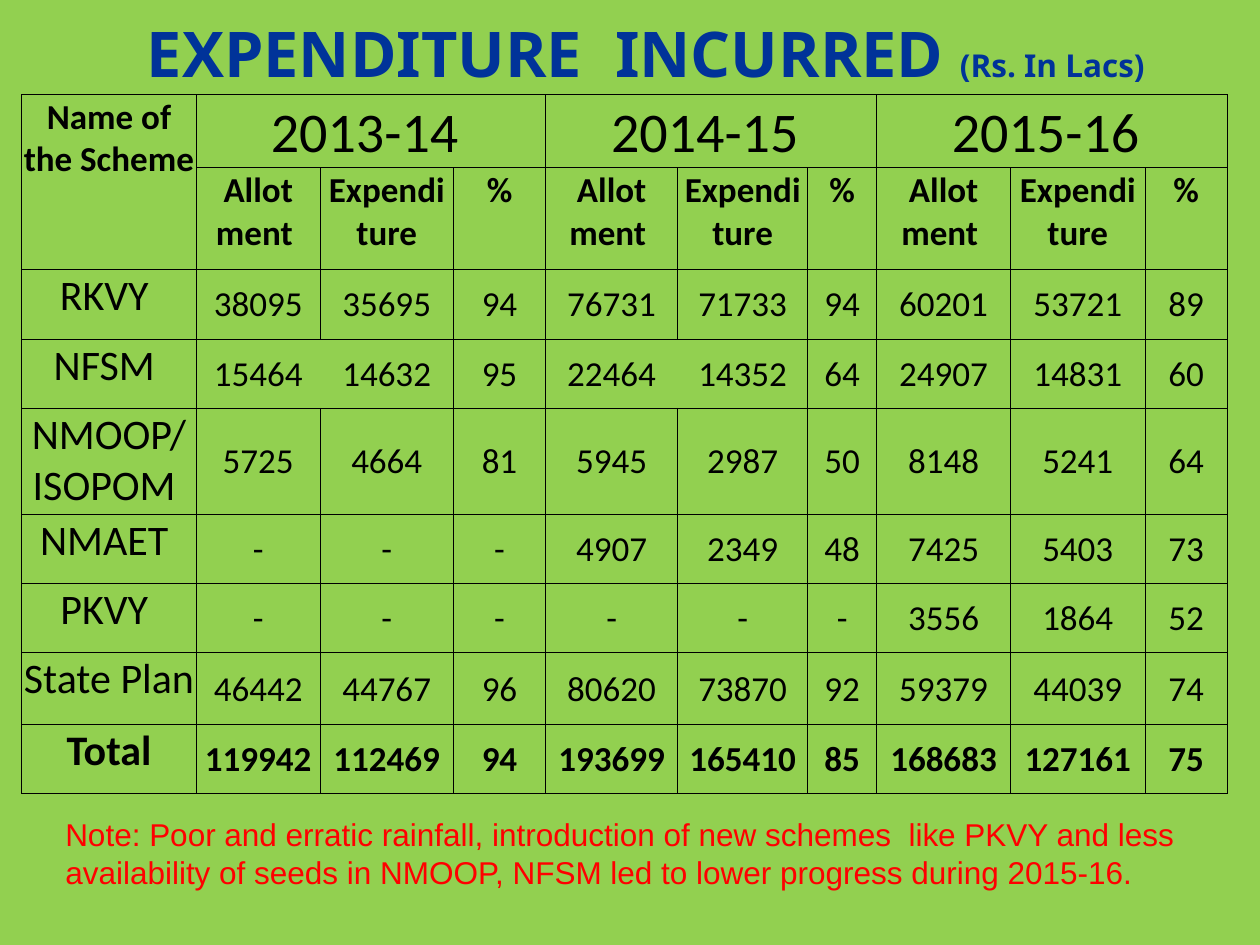
from lxml import etree
from pptx import Presentation
from pptx.dml.color import RGBColor
from pptx.enum import text
from pptx.oxml import ns
from pptx.util import Inches, Pt

GREEN = RGBColor(0x92, 0xD0, 0x50)
NAVY = RGBColor(0x00, 0x33, 0x99)
BLACK = RGBColor(0x00, 0x00, 0x00)
RED = RGBColor(0xFF, 0x00, 0x00)

COLUMNS = [1.39, 0.98, 1.06, 0.73, 1.05, 1.03, 0.55, 1.06, 1.07, 0.65]
ROWS = [0.58, 0.81, 0.55, 0.55, 0.84, 0.55, 0.55, 0.57, 0.55]
YEARS = ["2013-14 ", "2014-15 ", "2015-16 "]
MEASURES = ["Allot\nment ", "Expendi\nture", "%"]
SCHEMES = [
    ("RKVY ", "38095 35695 94 76731 71733 94 60201 53721 89"),
    ("NFSM ", "15464 14632 95 22464 14352 64 24907 14831 60"),
    ("NMOOP/ ISOPOM ", "5725 4664 81 5945 2987 50 8148 5241 64"),
    ("NMAET ", " - - - 4907 2349 48 7425 5403 73"),
    ("PKVY ", "- - - - - - 3556 1864 52"),
    ("State Plan ", "46442 44767 96 80620 73870 92 59379 44039 74"),
    ("Total", "119942 112469 94 193699 165410 85 168683 127161 75"),
]
OPEN_SIDES = {(3, 1): "R", (3, 2): "L", (3, 4): "R", (3, 5): "L"}


def add_run(p, words, size, font, color, bold=False):
    """Add one formatted run to a paragraph."""
    r = p.add_run()
    r.text = words
    r.font.size = Pt(size)
    r.font.name = font
    r.font.color.rgb = color
    r.font.bold = bold


def add_text_box(slide, left, top, width, height, anchor):
    """Add a wrapping text box and return its text frame."""
    tf = slide.shapes.add_textbox(Inches(left), Inches(top), Inches(width), Inches(height)).text_frame
    tf.word_wrap = True
    tf.vertical_anchor = anchor
    return tf


def add_title(slide, left, top, width, height):
    """Place the centred heading with its unit."""
    tf = add_text_box(slide, left, top, width, height, text.MSO_ANCHOR.MIDDLE)
    p = tf.paragraphs[0]
    p.alignment = text.PP_ALIGN.CENTER
    add_run(p, "EXPENDITURE  INCURRED ", 36, "Noto Sans", NAVY, True)
    add_run(p, "(Rs. In Lacs)", 18, "Noto Sans", NAVY, True)


def set_borders(cell, open_side):
    """Draw thin black borders on every side but the open one."""
    tc_pr = cell._tc.get_or_add_tcPr()
    for side in "LRTB":
        ln = etree.SubElement(tc_pr, ns.qn(f"a:ln{side}"), w=str(Pt(0.5)))
        if side == open_side:
            etree.SubElement(ln, ns.qn("a:noFill"))
        else:
            fill = etree.SubElement(ln, ns.qn("a:solidFill"))
            etree.SubElement(fill, ns.qn("a:srgbClr"), val=str(BLACK))


def fill_cell(cell, words, size, bold, anchor):
    """Write centred lines into a table cell."""
    cell.vertical_anchor = anchor
    tf = cell.text_frame
    for i, line in enumerate(words.split("\n")):
        p = tf.add_paragraph() if i else tf.paragraphs[0]
        p.alignment = text.PP_ALIGN.CENTER
        add_run(p, line, size, "Calibri", BLACK, bold)


def add_expenditure_table(slide, left, top, width, height):
    """Place the table of allotment and expenditure by scheme and year."""
    table = slide.shapes.add_table(len(ROWS), len(COLUMNS), Inches(left), Inches(top),
                                   Inches(width), Inches(height)).table
    table.first_row = table.horz_banding = False
    for column, size in zip(table.columns, COLUMNS):
        column.width = Inches(size)
    for row, size in zip(table.rows, ROWS):
        row.height = Inches(size)
    for r in range(len(ROWS)):
        for c in range(len(COLUMNS)):
            cell = table.cell(r, c)
            cell.margin_left = cell.margin_right = cell.margin_top = Inches(0.01)
            cell.margin_bottom = 0
            set_borders(cell, OPEN_SIDES.get((r, c)))
            cell.fill.background()

    table.cell(0, 0).merge(table.cell(1, 0))
    fill_cell(table.cell(0, 0), "Name of the Scheme", 20, True, text.MSO_ANCHOR.TOP)
    for i, year in enumerate(YEARS):
        first = 1 + i * len(MEASURES)
        table.cell(0, first).merge(table.cell(0, first + len(MEASURES) - 1))
        fill_cell(table.cell(0, first), year, 32, False, text.MSO_ANCHOR.BOTTOM)
        for c, measure in enumerate(MEASURES, first):
            fill_cell(table.cell(1, c), measure, 20, True, text.MSO_ANCHOR.TOP)
    for r, (scheme, values) in enumerate(SCHEMES, 2):
        bold = scheme == "Total"
        fill_cell(table.cell(r, 0), scheme, 24, bold, text.MSO_ANCHOR.TOP)
        for c, value in enumerate(values.strip(" ").split(" "), 1):
            fill_cell(table.cell(r, c), value, 20, bold, text.MSO_ANCHOR.MIDDLE)


def add_note(slide, left, top, width, height):
    """Place the red note under the table."""
    tf = add_text_box(slide, left, top, width, height, text.MSO_ANCHOR.TOP)
    tf.auto_size = text.MSO_AUTO_SIZE.SHAPE_TO_FIT_TEXT
    add_run(tf.paragraphs[0],
            "Note: Poor and erratic rainfall, introduction of new schemes  like PKVY and less "
            "availability of seeds in NMOOP, NFSM led to lower progress during 2015-16.",
            18, "Arial", RED)


def main():
    """Build and save the slide."""
    prs = Presentation()
    prs.slide_width, prs.slide_height = Inches(10), Inches(7.5)
    slide = prs.slides.add_slide(prs.slide_layouts[6])
    slide.background.fill.solid()
    slide.background.fill.fore_color.rgb = GREEN
    add_title(slide, 0.25, 0, 9.75, 0.83)
    add_expenditure_table(slide, 0.17, 0.75, sum(COLUMNS), sum(ROWS))
    add_note(slide, 0.42, 6.42, 9.33, 0.71)
    prs.save("out.pptx")


if __name__ == "__main__":
    main()
